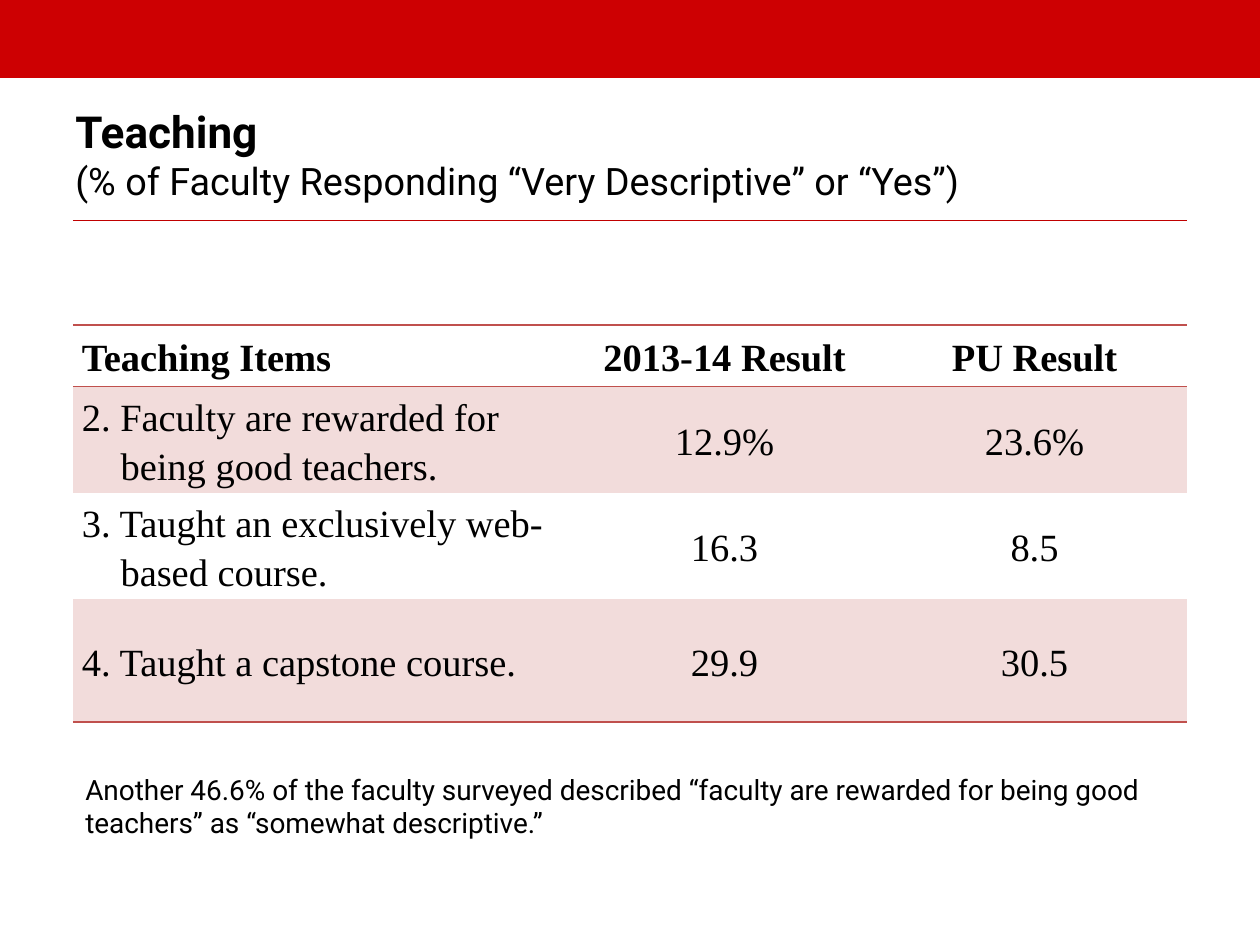
from lxml import etree
from pptx import Presentation
from pptx.dml.color import RGBColor
from pptx.enum import shapes, text
from pptx.oxml.ns import qn
from pptx.util import Cm, Pt

RED = RGBColor(0xCD, 0x00, 0x02)
RULE_RED = RGBColor(0xC0, 0x00, 0x00)
BORDER_RED = RGBColor(0xC0, 0x50, 0x4D)
PINK = RGBColor(0xF2, 0xDC, 0xDB)
BLACK = RGBColor(0x00, 0x00, 0x00)
SANS, SERIF = "Roboto", "Times New Roman"

TITLE = "Teaching"
SUBTITLE = "(% of Faculty Responding “Very Descriptive” or “Yes”)"
NOTE = ("Another 46.6% of the faculty surveyed described “faculty are rewarded "
        "for being good teachers” as “somewhat descriptive.”")
ROWS = [
    (["Teaching Items"], ["2013-14 Result"], ["PU Result"]),
    (["2. Faculty are rewarded for", "being good teachers."], ["12.9%"], ["23.6%"]),
    (["3. Taught an exclusively web-", "based course."], ["16.3"], ["8.5"]),
    (["4. Taught a capstone course."], ["29.9"], ["30.5"]),
]
COL_WIDTHS = [9.96, 6.35, 6.15]
ROW_HEIGHTS = [1.24, 1.97, 1.97, 2.48]
RULED_EDGES = {0, 1, len(ROWS)}
LEFT, RIGHT = 1.47, 23.93


def add_run(p, content, font, size, bold=False):
    r = p.add_run()
    r.text = content
    r.font.name, r.font.size, r.font.bold = font, Pt(size), bold
    r.font.color.rgb = BLACK


def add_text_box(s, left, top, width, height, anchor):
    tf = s.shapes.add_textbox(Cm(left), Cm(top), Cm(width), Cm(height)).text_frame
    tf.word_wrap = True
    tf.vertical_anchor = anchor
    return tf


def set_borders(cell, row):
    tc_pr = cell._tc.get_or_add_tcPr()
    ruled = {"lnT": row in RULED_EDGES, "lnB": row + 1 in RULED_EDGES}
    for side in ("lnL", "lnR", "lnT", "lnB"):
        ln = etree.SubElement(tc_pr, qn(f"a:{side}"), w=str(Pt(1)))
        if ruled.get(side):
            fill = etree.SubElement(ln, qn("a:solidFill"))
            etree.SubElement(fill, qn("a:srgbClr"), val=str(BORDER_RED))
        else:
            etree.SubElement(ln, qn("a:noFill"))


def fill_cell(cell, row, col, lines):
    cell.margin_left = cell.margin_right = Cm(0.18)
    cell.margin_top = cell.margin_bottom = 0
    cell.vertical_anchor = text.MSO_ANCHOR.MIDDLE
    set_borders(cell, row)
    if row % 2:
        cell.fill.solid()
        cell.fill.fore_color.rgb = PINK
    else:
        cell.fill.background()
    tf = cell.text_frame
    for i, line in enumerate(lines):
        p = tf.add_paragraph() if i else tf.paragraphs[0]
        p.alignment = text.PP_ALIGN.CENTER if col else text.PP_ALIGN.LEFT
        p.line_spacing = 1.15
        if i:
            p._p.get_or_add_pPr().set("marL", str(Cm(0.78)))
        add_run(p, line, SERIF, 22, bold=row == 0)


def add_results_table(s):
    table = s.shapes.add_table(len(ROWS), len(COL_WIDTHS), Cm(LEFT), Cm(6.55),
                               Cm(sum(COL_WIDTHS)), Cm(sum(ROW_HEIGHTS))).table
    table.first_row = table.horz_banding = False
    for column, width in zip(table.columns, COL_WIDTHS):
        column.width = Cm(width)
    for row, (height, cells) in enumerate(zip(ROW_HEIGHTS, ROWS)):
        table.rows[row].height = Cm(height)
        for col, lines in enumerate(cells):
            fill_cell(table.cell(row, col), row, col, lines)


def main():
    prs = Presentation()
    prs.slide_width, prs.slide_height = Cm(25.4), Cm(19.05)
    s = prs.slides.add_slide(prs.slide_layouts[6])

    band = s.shapes.add_shape(shapes.MSO_SHAPE.RECTANGLE, 0, 0, prs.slide_width, Cm(1.57))
    band.shadow.inherit = False
    band.fill.solid()
    band.fill.fore_color.rgb = RED
    band.line.fill.background()

    tf = add_text_box(s, 1.27, 1.98, 23.93, 2.24, text.MSO_ANCHOR.MIDDLE)
    p = tf.paragraphs[0]
    add_run(p, TITLE, SANS, 25.2, bold=True)
    p.add_line_break()
    add_run(p, SUBTITLE, SANS, 21.6)

    rule = s.shapes.add_connector(shapes.MSO_CONNECTOR.STRAIGHT,
                                  Cm(LEFT), Cm(4.44), Cm(RIGHT), Cm(4.44))
    rule.line.color.rgb = RULE_RED
    rule.line.width = Pt(0.75)
    etree.SubElement(rule._element.spPr, qn("a:effectLst"))

    add_results_table(s)

    tf = add_text_box(s, LEFT, 15.44, 22.23, 1.63, text.MSO_ANCHOR.TOP)
    add_run(tf.paragraphs[0], NOTE, SANS, 16)

    prs.save("out.pptx")


if __name__ == "__main__":
    main()
